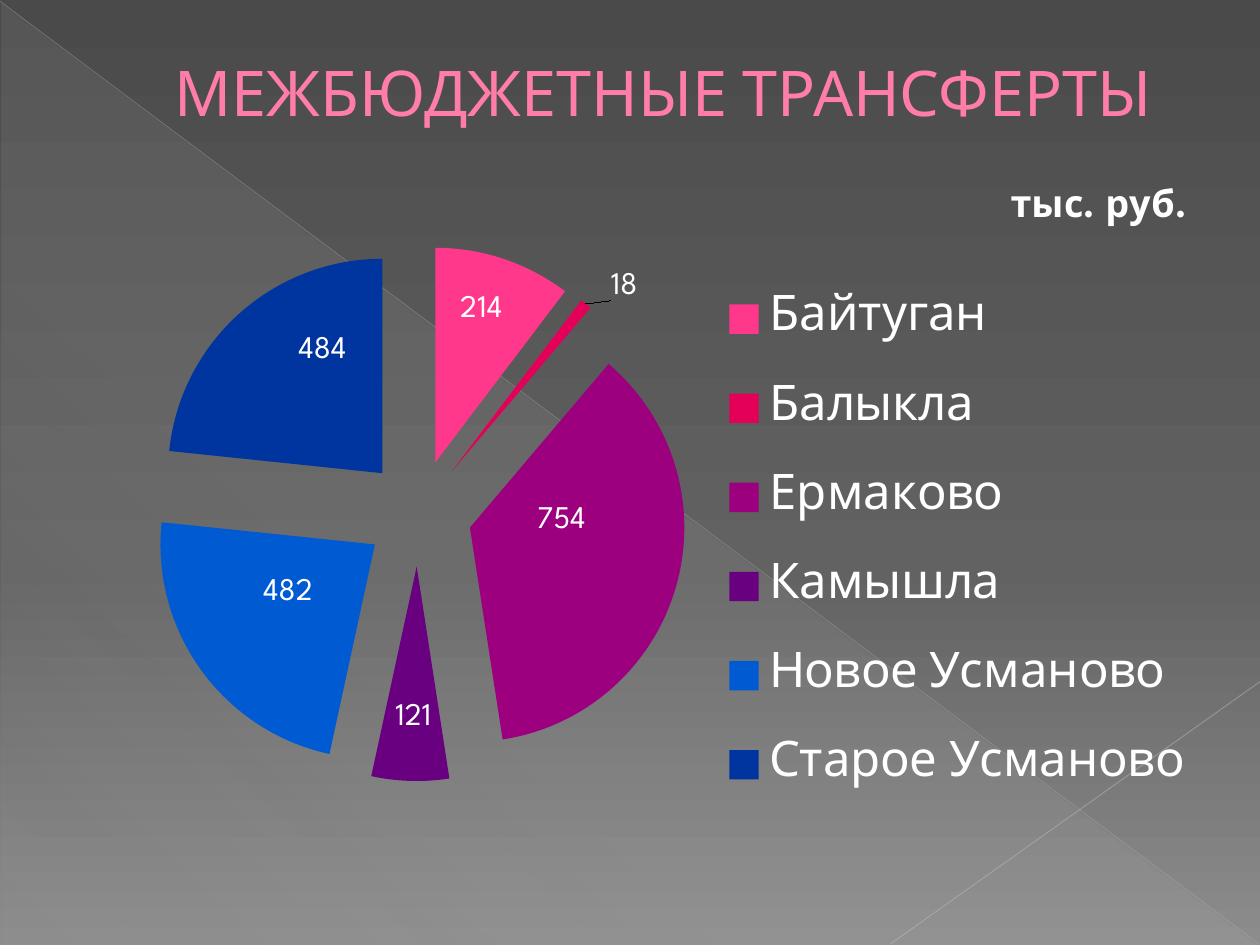
import pptx
import pptx.util
import pptx.chart.data
import pptx.dml.color
import pptx.enum.chart
import pptx.enum.shapes
import pptx.enum.text
import pptx.oxml
import pptx.oxml.ns

Pt = pptx.util.Pt
FONT = "League Spartan"
COLORS = {
    "title": "FF7DA7", "title_outline": "B12761", "text": "FFFFFF",
    "triangle": "D2D2D2", "diagonal": "BFBFBF", "corner": "C6C6C6",
}
TITLE = "МЕЖБЮДЖЕТНЫЕ ТРАНСФЕРТЫ"
UNIT = "тыс. руб."
TRANSFERS = [
    ("Байтуган", 214, "FF388C", (0.01, -0.07)),
    ("Балыкла", 18, "E40059", (0.09, -0.14)),
    ("Ермаково", 754, "9C007F", (-0.01, -0.05)),
    ("Камышла", 121, "68007F", (0, 0.06)),
    ("Новое Усманово", 482, "005BD3", (0, -0.02)),
    ("Старое Усманово", 484, "00349E", (0.01, -0.06)),
]
BACKGROUND_STOPS = [(0, "4A4A4A", 100), (60, "626262", 100), (100, "8C8C8C", 100)]
TRIANGLE_STOPS = [(0, COLORS["triangle"], 10), (70, COLORS["triangle"], 8),
                  (100, COLORS["triangle"], 1)]
LINES = [
    ((0, 0.72), (719.28, 539.28), "diagonal", 0.39, 35),
    ((720, 389.52), (509.04, 539.28), "corner", 0.47, 45),
]
NAMESPACES = pptx.oxml.ns.nsdecls("a", "c")


def rgb(value):
    return pptx.dml.color.RGBColor.from_string(value)


def gradient(stops, angle):
    stop_xml = "".join(
        f'<a:gs pos="{position * 1000}"><a:srgbClr val="{color}">'
        f'<a:alpha val="{opacity * 1000}"/></a:srgbClr></a:gs>'
        for position, color, opacity in stops)
    return pptx.oxml.parse_xml(
        f'<a:gradFill {NAMESPACES} rotWithShape="1"><a:gsLst>{stop_xml}</a:gsLst>'
        f'<a:lin ang="{angle * 60000}" scaled="0"/></a:gradFill>')


def replace_solid_fill(element, query, stops, angle):
    solid = element.xpath(query)[0]
    solid.getparent().replace(solid, gradient(stops, angle))


def manual_layout(x, y, width=None, height=None, absolute=True, inner=False):
    parts = ['<c:layoutTarget val="inner"/>'] if inner else []
    if absolute:
        parts += ['<c:xMode val="edge"/>', '<c:yMode val="edge"/>']
    parts += [f'<c:x val="{x}"/>', f'<c:y val="{y}"/>']
    if width is not None:
        parts += [f'<c:w val="{width}"/>', f'<c:h val="{height}"/>']
    return pptx.oxml.parse_xml(
        f'<c:layout {NAMESPACES}><c:manualLayout>{"".join(parts)}</c:manualLayout></c:layout>')


def place(element, predecessor, layout):
    for old in element.xpath("./c:layout"):
        element.remove(old)
    if predecessor is None:
        element.insert(0, layout)
    else:
        element.xpath(f"./c:{predecessor}")[0].addnext(layout)


def style(font, size, color, bold=False):
    font.name = FONT
    font.size = Pt(size)
    font.bold = bold
    font.color.rgb = rgb(color)


def add_background(slide):
    slide.background.fill.solid()
    replace_solid_fill(slide.element, ".//p:bgPr/a:solidFill", BACKGROUND_STOPS, 90)
    triangle = slide.shapes.add_shape(
        pptx.enum.shapes.MSO_SHAPE.RIGHT_TRIANGLE, Pt(0.72), Pt(1.44), Pt(718.56), Pt(538.56))
    triangle.shadow.inherit = False
    triangle.line.fill.background()
    triangle.fill.solid()
    replace_solid_fill(triangle.element, "./p:spPr/a:solidFill", TRIANGLE_STOPS, 133)
    for start, end, color, width, opacity in LINES:
        line = slide.shapes.add_connector(
            pptx.enum.shapes.MSO_CONNECTOR.STRAIGHT, *map(Pt, start + end))
        line.line.width = Pt(width)
        line.line.color.rgb = rgb(COLORS[color])
        line.element.xpath(".//a:ln//a:srgbClr")[0].append(
            pptx.oxml.parse_xml(f'<a:alpha {NAMESPACES} val="{opacity * 1000}"/>'))
        line.element.spPr.append(pptx.oxml.parse_xml(f"<a:effectLst {NAMESPACES}/>"))


def add_title(slide):
    box = slide.shapes.add_textbox(Pt(36), Pt(21), Pt(648), Pt(62))
    frame = box.text_frame
    frame.word_wrap = True
    frame.vertical_anchor = pptx.enum.text.MSO_ANCHOR.MIDDLE
    frame.text = TITLE
    paragraph = frame.paragraphs[0]
    paragraph.alignment = pptx.enum.text.PP_ALIGN.CENTER
    properties = paragraph._p.get_or_add_pPr()
    properties.set("marL", str(Pt(38)))
    properties.set("indent", "0")
    run = paragraph.runs[0]
    style(run.font, 36, COLORS["title"])
    run._r.get_or_add_rPr().insert(0, pptx.oxml.parse_xml(
        f'<a:ln {NAMESPACES} w="{Pt(0.5)}"><a:solidFill>'
        f'<a:srgbClr val="{COLORS["title_outline"]}"/></a:solidFill></a:ln>'))


def add_transfer_chart(slide):
    data = pptx.chart.data.CategoryChartData()
    data.categories = [name for name, *_ in TRANSFERS]
    data.add_series("Series 1", [value for _, value, *_ in TRANSFERS])
    chart = slide.shapes.add_chart(
        pptx.enum.chart.XL_CHART_TYPE.PIE, Pt(25), Pt(94.5), Pt(669), Pt(414), data).chart
    style(chart.font, 18, COLORS["text"])

    chart.has_title = True
    chart.chart_title.include_in_layout = False
    chart.chart_title.text_frame.text = UNIT
    style(chart.chart_title.text_frame.paragraphs[0].runs[0].font, 21.6, COLORS["text"], True)
    place(chart.chart_title._element, "tx", manual_layout(0.82, 0.02))

    chart.has_legend = True
    chart.legend.position = pptx.enum.chart.XL_LEGEND_POSITION.RIGHT
    chart.legend.include_in_layout = False
    style(chart.legend.font, 28, COLORS["text"])
    place(chart.legend._element, "legendPos", manual_layout(0.57, 0.12, 0.42, 0.8))

    plot = chart.plots[0]
    plot.vary_by_categories = True
    place(chart._chartSpace.chart.plotArea, None,
          manual_layout(0, 0.11, 0.64, 0.74, inner=True))
    series = plot.series[0]
    center = pptx.enum.chart.XL_LABEL_POSITION.CENTER
    labels = series.data_labels
    labels.show_value = True
    labels.position = center
    style(labels.font, 18, COLORS["text"])
    for index, (_, _, color, offset) in enumerate(TRANSFERS):
        point = series.points[index]
        point.format.fill.solid()
        point.format.fill.fore_color.rgb = rgb(color)
        point.format.line.fill.background()
        style(point.data_label.font, 18, COLORS["text"])
        point.data_label.position = center
        label = labels._element.xpath(f"./c:dLbl[c:idx/@val='{index}']")[0]
        place(label, "idx", manual_layout(*offset, absolute=False))
    series._element.xpath("./c:dPt")[0].addprevious(
        pptx.oxml.parse_xml(f'<c:explosion {NAMESPACES} val="25"/>'))


def main():
    presentation = pptx.Presentation()
    presentation.slide_width = Pt(720)
    presentation.slide_height = Pt(540)
    slide = presentation.slides.add_slide(presentation.slide_layouts[6])
    add_background(slide)
    add_title(slide)
    add_transfer_chart(slide)
    presentation.save("out.pptx")


if __name__ == "__main__":
    main()
